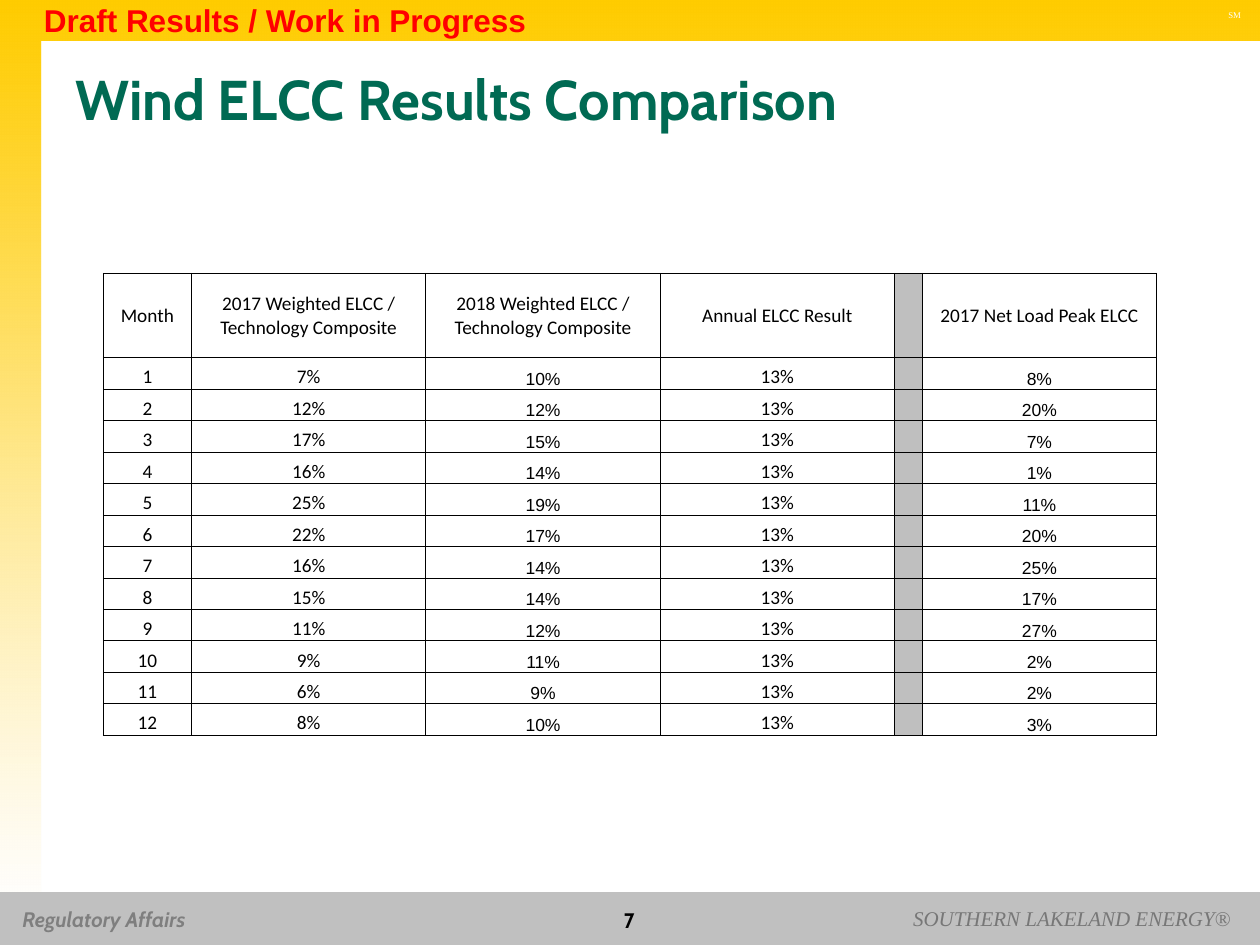
"""Build the wind ELCC comparison slide with its frame, footer and monthly table."""
from lxml import etree
from pptx import Presentation
from pptx.dml.color import RGBColor
from pptx.enum.shapes import MSO_SHAPE
from pptx.enum.text import MSO_ANCHOR, PP_ALIGN
from pptx.oxml.ns import qn
from pptx.util import Inches, Pt

LEFT, MID, RIGHT = PP_ALIGN.LEFT, PP_ALIGN.CENTER, PP_ALIGN.RIGHT
TOP, CENTER, BASE = MSO_ANCHOR.TOP, MSO_ANCHOR.MIDDLE, MSO_ANCHOR.BOTTOM
RECT = MSO_SHAPE.RECTANGLE

HUES = {
    "gold": "FFCC00", "white": "FFFFFF", "foot": "C0C0C0", "dim": "7F7F7F",
    "name": "777777", "green": "006A53", "black": "000000", "gap": "BFBFBF",
    "red": "FF0000",
}
RGB = {key: RGBColor.from_string(hue) for key, hue in HUES.items()}

deck = Presentation()
deck.slide_width, deck.slide_height = Inches(10), Inches(7.5)
WIDE, HIGH = deck.slide_width / 100, deck.slide_height / 100
slide = deck.slides.add_slide(deck.slide_layouts[6])
shapes = slide.shapes


def place(x, y, w, h):
    return [round(x * WIDE), round(y * HIGH), round(w * WIDE), round(h * HIGH)]


def write(para, text, size, face, hue, bold=False, slant=False):
    run = para.add_run()
    run.text = text
    font = run.font
    font.size, font.name, font.bold, font.italic = Pt(size), face, bold, slant
    font.color.rgb = RGB[hue]


edge = [(0, 96.67), (0, 0), (100, 0), (100, 4.4), (3.3, 4.4), (3.3, 96.67)]
for layer in range(2):
    path = [(x * WIDE, y * HIGH) for x, y in edge]
    build = shapes.build_freeform(*path[0], scale=1.0)
    build.add_line_segments(path[1:], close=True)
    frame = build.convert_to_shape()
    frame.shadow.inherit = False
    frame.line.fill.background()
    frame.fill.gradient()
    frame.fill.gradient_angle = 270
    for stop, hue, spot in zip(frame.fill.gradient_stops, ("gold", "white"), (0, 1)):
        stop.color.rgb, stop.position = RGB[hue], spot
    fade = frame._element.xpath(".//a:gs[2]/a:srgbClr")[0]
    etree.SubElement(fade, qn("a:alpha"), val="40000")

foot = shapes.add_shape(RECT, *place(0, 94.4, 100, 5.6))
foot.shadow.inherit = False
foot.fill.solid()
foot.fill.fore_color.rgb = RGB["foot"]
foot.line.fill.background()

labels = [
    ((0.8, 95.33, 17.4, 4), "Regulatory Affairs", LEFT, TOP, False,
     (12, "Cabin", "dim", True, True)),
    ((96.5, 0.4, 3, 2.4), "SM", LEFT, TOP, False,
     (5, "Times New Roman", "white")),
    ((70.6, 95.2, 28.1, 4), "SOUTHERN LAKELAND ENERGY®", RIGHT, TOP, False,
     (12, "Times New Roman", "name", False, True)),
    ((5, 5.07, 90, 10.53), "Wind ELCC Results Comparison", LEFT, CENTER, True,
     (32, "Cabin", "green", True)),
    ((38.3, 95.2, 23.3, 4.4), "7", MID, CENTER, True,
     (12, "Cabin", "black", True)),
    ((2.5, -0.53, 40.7, 5.33), "Draft Results / Work in Progress", LEFT, TOP, False,
     (18, "Arial", "red", True)),
]
for box, text, align, anchor, wrap, style in labels:
    body = shapes.add_textbox(*place(*box)).text_frame
    body.word_wrap, body.vertical_anchor = wrap, anchor
    para = body.paragraphs[0]
    para.alignment = align
    write(para, text, *style)

heads = ["Month", "2017 Weighted ELCC / Technology Composite",
         "2018 Weighted ELCC / Technology Composite", "Annual ELCC Result",
         "", "2017 Net Load Peak ELCC"]
first = [7, 12, 17, 16, 25, 22, 16, 15, 11, 9, 6, 8]
second = [10, 12, 15, 14, 19, 17, 14, 14, 12, 11, 9, 10]
peak = [8, 20, 7, 1, 11, 20, 25, 17, 27, 2, 2, 3]
rows = [heads] + [
    [str(month), f"{a}%", f"{b}%", "13%", "", f"{c}%"]
    for month, (a, b, c) in enumerate(zip(first, second, peak), 1)
]
cols = [7, 18.6, 18.6, 18.6, 2.2, 18.6]
GAP, ARIAL = 4, (2, 5)

grid = shapes.add_table(len(rows), len(cols), *place(8.2, 28.93, 83.6, 48.93)).table
grid.first_row = grid.horz_banding = False
for col, share in zip(grid.columns, cols):
    col.width = round(share * WIDE)
for r, texts in enumerate(rows):
    grid.rows[r].height = round((3.33 if r else 8.93) * HIGH)
    for c, text in enumerate(texts):
        cell = grid.cell(r, c)
        cell.margin_left = cell.margin_right = cell.margin_top = Inches(0.01)
        cell.margin_bottom = 0
        cell.vertical_anchor = BASE if r else CENTER
        props = cell._tc.get_or_add_tcPr()
        for side in ("a:lnL", "a:lnR", "a:lnT", "a:lnB"):
            line = etree.SubElement(props, qn(side), w=str(Pt(0.5)))
            solid = etree.SubElement(line, qn("a:solidFill"))
            etree.SubElement(solid, qn("a:srgbClr"), val=HUES["black"])
        para = cell.text_frame.paragraphs[0]
        para.alignment = MID
        if c == GAP:
            cell.fill.solid()
            cell.fill.fore_color.rgb = RGB["gap"]
            etree.SubElement(para._p, qn("a:endParaRPr"), sz="1000")
        else:
            cell.fill.background()
            size, face = (10, "Arial") if r and c in ARIAL else (11, "Calibri")
            write(para, text, size, face, "black")

deck.save("out.pptx")
